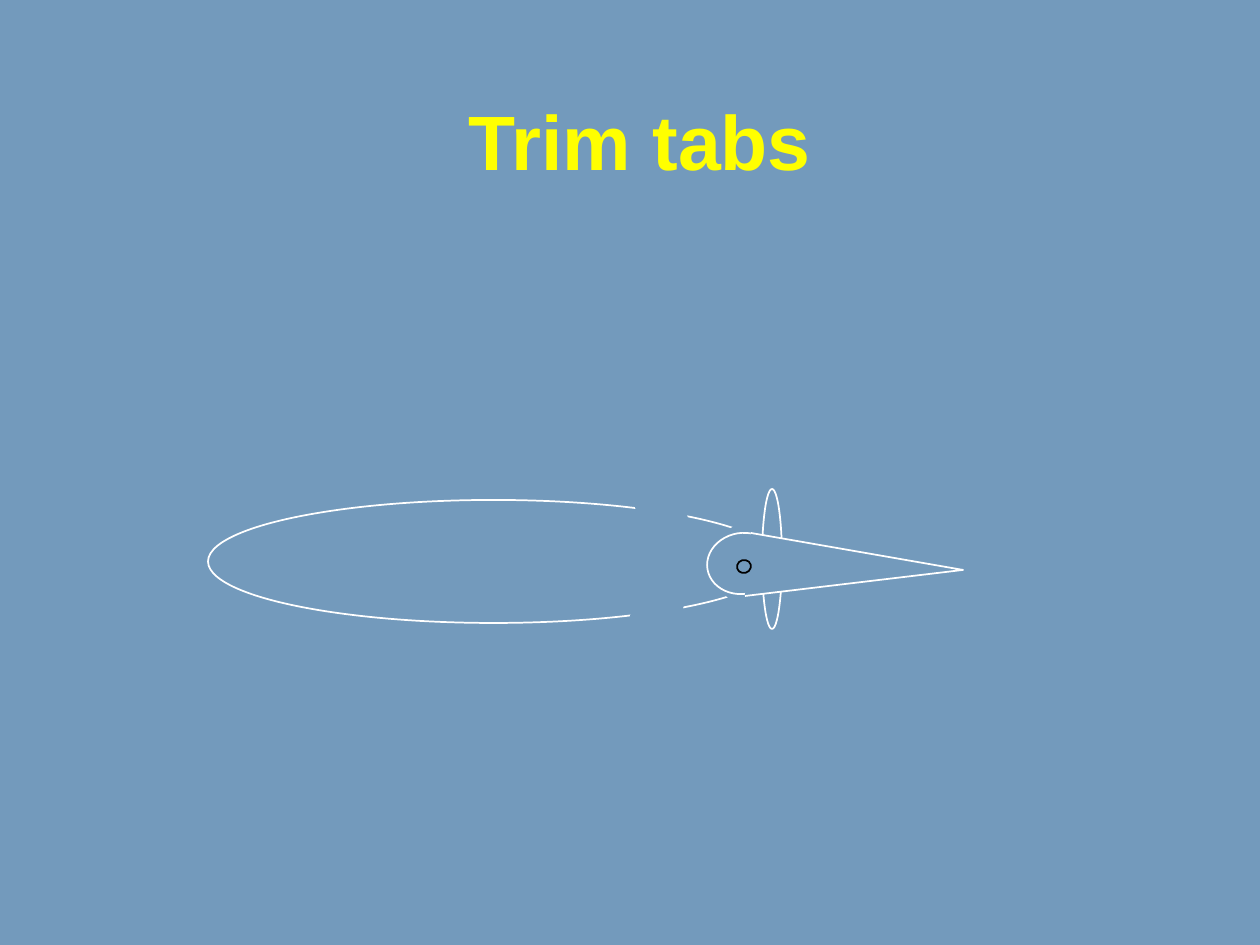
from lxml import etree
from pptx import Presentation
from pptx.dml.color import RGBColor
from pptx.enum.shapes import MSO_CONNECTOR, MSO_SHAPE
from pptx.enum.text import MSO_ANCHOR, PP_ALIGN
from pptx.oxml.ns import qn
from pptx.util import Pt

PX = 914400 / 126
OVAL = MSO_SHAPE.OVAL
ROUND = MSO_SHAPE.ROUNDED_RECTANGLE
LINE = MSO_CONNECTOR.STRAIGHT
CENTER = PP_ALIGN.CENTER
BOTTOM = MSO_ANCHOR.BOTTOM
SKY, WHITE, BLACK, YELLOW = "739ABC", "FFFFFF", "000000", "FFFF00"


def px(n):
    return round(n * PX)


def color(code):
    return RGBColor.from_string(code)


def paint(shape, line):
    """Fill with the background colour and outline if a line colour is given."""
    shape.shadow.inherit = False
    shape.fill.solid()
    shape.fill.fore_color.rgb = color(SKY)
    if line:
        shape.line.color.rgb = color(line)
        shape.line.width = Pt(1)
    else:
        shape.line.fill.background()


def add_part(slide, kind, box, line=None, turn=0):
    shape = slide.shapes.add_shape(kind, *map(px, box))
    paint(shape, line)
    shape.rotation = turn
    if kind == ROUND:
        shape.adjustments[0] = 0.125


def add_wedge(slide, points, line):
    first, *rest = points
    path = slide.shapes.build_freeform(*first, scale=PX)
    path.add_line_segments(rest, close=False)
    paint(path.convert_to_shape(), line)


def add_line(slide, ends, line):
    rule = slide.shapes.add_connector(LINE, *map(px, ends))
    rule.line.color.rgb = color(line)
    rule.line.width = Pt(1)
    etree.SubElement(rule._element.spPr, qn("a:effectLst"))


def add_text(slide, text, box, size, ink, bold=False, font="Arial"):
    frame = slide.shapes.add_textbox(*map(px, box)).text_frame
    frame.word_wrap = True
    frame.vertical_anchor = BOTTOM
    para = frame.paragraphs[0]
    para.alignment = CENTER
    run = para.add_run()
    run.text = text
    run.font.name = font
    run.font.size = Pt(size)
    run.font.bold = bold
    run.font.color.rgb = color(ink)


def add_wing(slide):
    add_part(slide, OVAL, (208, 500, 571, 123), WHITE)
    add_part(slide, OVAL, (711, 518, 106, 92))
    add_line(slide, (571, 512, 772, 512), SKY)
    add_line(slide, (650, 612, 777, 611), SKY)
    add_part(slide, ROUND, (641, 493, 49, 74), turn=347)
    add_part(slide, ROUND, (636, 573, 48, 57), turn=18)


def add_tab(slide):
    add_part(slide, OVAL, (762, 489, 20, 140), WHITE)
    add_part(slide, OVAL, (707, 533, 71, 61), WHITE, 351)
    add_wedge(slide, [(751, 533), (963, 570), (745, 596)], WHITE)
    add_part(slide, OVAL, (737, 560, 14, 13), BLACK, 344)


def main():
    deck = Presentation()
    deck.slide_width, deck.slide_height = px(1260), px(945)
    slide = deck.slides.add_slide(deck.slide_layouts[6])
    back = slide.background.fill
    back.solid()
    back.fore_color.rgb = color(SKY)
    add_wing(slide)
    add_tab(slide)
    add_text(slide, "Trim tabs", (20, 86, 1240, 106), 44, YELLOW, bold=True)
    deck.save("out.pptx")


if __name__ == "__main__":
    main()
